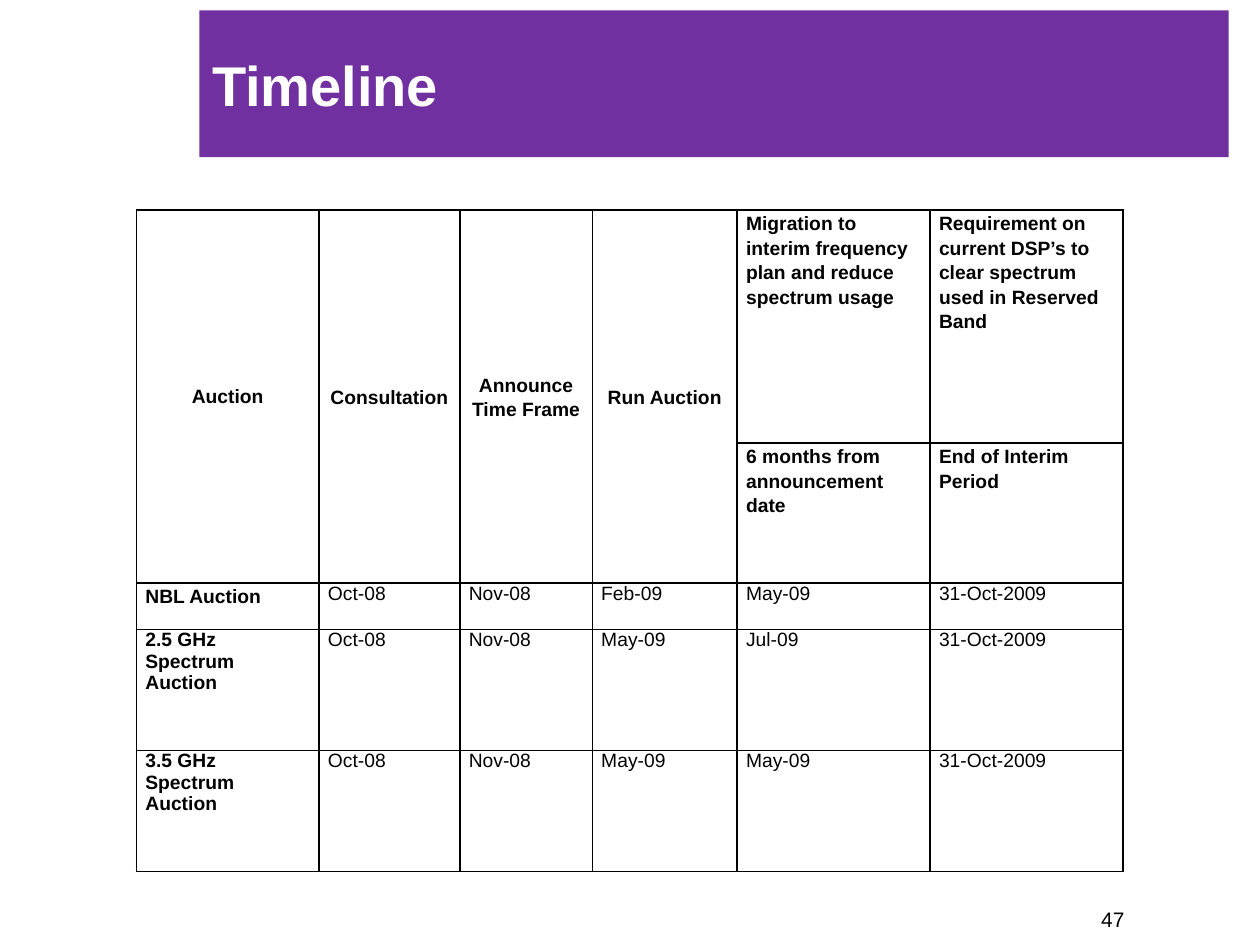
from dataclasses import dataclass

from lxml.etree import SubElement
from pptx import Presentation
from pptx.dml.color import RGBColor
from pptx.enum.text import MSO_ANCHOR as Anchor, PP_ALIGN as Align
from pptx.oxml.ns import qn
from pptx.util import Cm, Pt

PURPLE = RGBColor(0x70, 0x30, 0xA0)
WHITE = RGBColor(0xFF, 0xFF, 0xFF)
BLACK = RGBColor(0, 0, 0)
FONT = "Arial"

COLUMN_WIDTHS = (3.68, 2.84, 2.67, 2.92, 3.89, 3.89)
ROW_HEIGHTS = (4.7, 2.82, 0.94, 2.44, 2.44)
HEADER_ROWS = 2


@dataclass(frozen=True)
class CellStyle:
    bold: bool = True
    align: Align = Align.LEFT
    spacing: float = 1.0
    anchor: Anchor = Anchor.TOP


@dataclass(frozen=True)
class Auction:
    name: str
    dates: tuple[str, ...]
    name_style: CellStyle


CORNER = CellStyle(align=Align.CENTER, anchor=Anchor.MIDDLE)
STEP = CellStyle(align=Align.CENTER, spacing=1.15, anchor=Anchor.MIDDLE)
DEADLINE = CellStyle(spacing=1.15)
BAND = CellStyle()
DATE = CellStyle(bold=False, align=Align.JUSTIFY)

SPANNING_HEADERS = (
    ("Auction", CORNER),
    ("Consultation", STEP),
    ("Announce Time Frame", STEP),
    ("Run Auction", STEP),
)
DEADLINE_HEADERS = (
    ("Migration to interim frequency plan and reduce spectrum usage",
     "Requirement on current DSP’s to clear spectrum used in Reserved Band"),
    ("6 months from announcement date", "End of Interim Period"),
)
AUCTIONS = (
    Auction("NBL Auction", ("Oct-08", "Nov-08", "Feb-09", "May-09", "31-Oct-2009"),
            CellStyle(align=Align.JUSTIFY, spacing=1.15)),
    Auction("2.5 GHz Spectrum Auction",
            ("Oct-08", "Nov-08", "May-09", "Jul-09", "31-Oct-2009"), BAND),
    Auction("3.5 GHz Spectrum Auction",
            ("Oct-08", "Nov-08", "May-09", "May-09", "31-Oct-2009"), BAND),
)


def add_span(para, text: str, size: float, color: RGBColor, bold: bool = False) -> None:
    span = para.add_run()
    span.text = text
    span.font.name = FONT
    span.font.size = Pt(size)
    span.font.bold = bold
    span.font.color.rgb = color


def format_cell(cell) -> None:
    """Give a cell black borders, a white fill and its margins."""
    cell.margin_left = cell.margin_right = Cm(0.18)
    cell.margin_top = cell.margin_bottom = 0
    properties = cell._tc.get_or_add_tcPr()
    for side in ("a:lnL", "a:lnR", "a:lnT", "a:lnB"):
        line = SubElement(properties, qn(side), w=str(Pt(1)))
        fill = SubElement(line, qn("a:solidFill"))
        SubElement(fill, qn("a:srgbClr"), val=str(BLACK))
    cell.fill.solid()
    cell.fill.fore_color.rgb = WHITE


def write_cell(cell, text: str, style: CellStyle) -> None:
    cell.vertical_anchor = style.anchor
    para = cell.text_frame.paragraphs[0]
    para.alignment = style.align
    para.line_spacing = style.spacing
    add_span(para, text, 11, BLACK, style.bold)


def add_title(page) -> None:
    title = page.shapes.title
    title.left, title.top, title.width, title.height = Cm(4.02), Cm(0.21), Cm(20.75), Cm(2.96)
    title.fill.solid()
    title.fill.fore_color.rgb = PURPLE
    title.text_frame.vertical_anchor = Anchor.MIDDLE
    para = title.text_frame.paragraphs[0]
    para.alignment = Align.LEFT
    add_span(para, "Timeline", 32, WHITE, True)


def add_timeline(page) -> None:
    table = page.shapes.add_table(
        len(ROW_HEIGHTS), len(COLUMN_WIDTHS), Cm(2.75), Cm(4.23),
        Cm(sum(COLUMN_WIDTHS)), Cm(sum(ROW_HEIGHTS))).table
    table.first_row = table.horz_banding = False
    for column, width in zip(table.columns, COLUMN_WIDTHS):
        column.width = Cm(width)
    for row, height in zip(table.rows, ROW_HEIGHTS):
        row.height = Cm(height)
    for cell in table.iter_cells():
        format_cell(cell)

    for column, (text, style) in enumerate(SPANNING_HEADERS):
        table.cell(0, column).merge(table.cell(HEADER_ROWS - 1, column))
        write_cell(table.cell(0, column), text, style)
    for row, texts in enumerate(DEADLINE_HEADERS):
        for column, text in enumerate(texts, len(SPANNING_HEADERS)):
            write_cell(table.cell(row, column), text, DEADLINE)
    for row, auction in enumerate(AUCTIONS, HEADER_ROWS):
        write_cell(table.cell(row, 0), auction.name, auction.name_style)
        for column, date in enumerate(auction.dates, 1):
            write_cell(table.cell(row, column), date, DATE)


def add_page_number(page) -> None:
    box = page.shapes.add_textbox(Cm(19.47), Cm(18.2), Cm(5.93), Cm(0.64))
    frame = box.text_frame
    frame.word_wrap = True
    frame.margin_top = frame.margin_bottom = 0
    frame.vertical_anchor = Anchor.MIDDLE
    para = frame.paragraphs[0]
    para.alignment = Align.CENTER
    add_span(para, "47", 12, BLACK)


def main() -> None:
    deck = Presentation()
    deck.slide_width, deck.slide_height = Cm(25.4), Cm(19.05)
    page = deck.slides.add_slide(deck.slide_layouts[5])
    add_title(page)
    add_timeline(page)
    add_page_number(page)
    deck.save("out.pptx")


if __name__ == "__main__":
    main()
